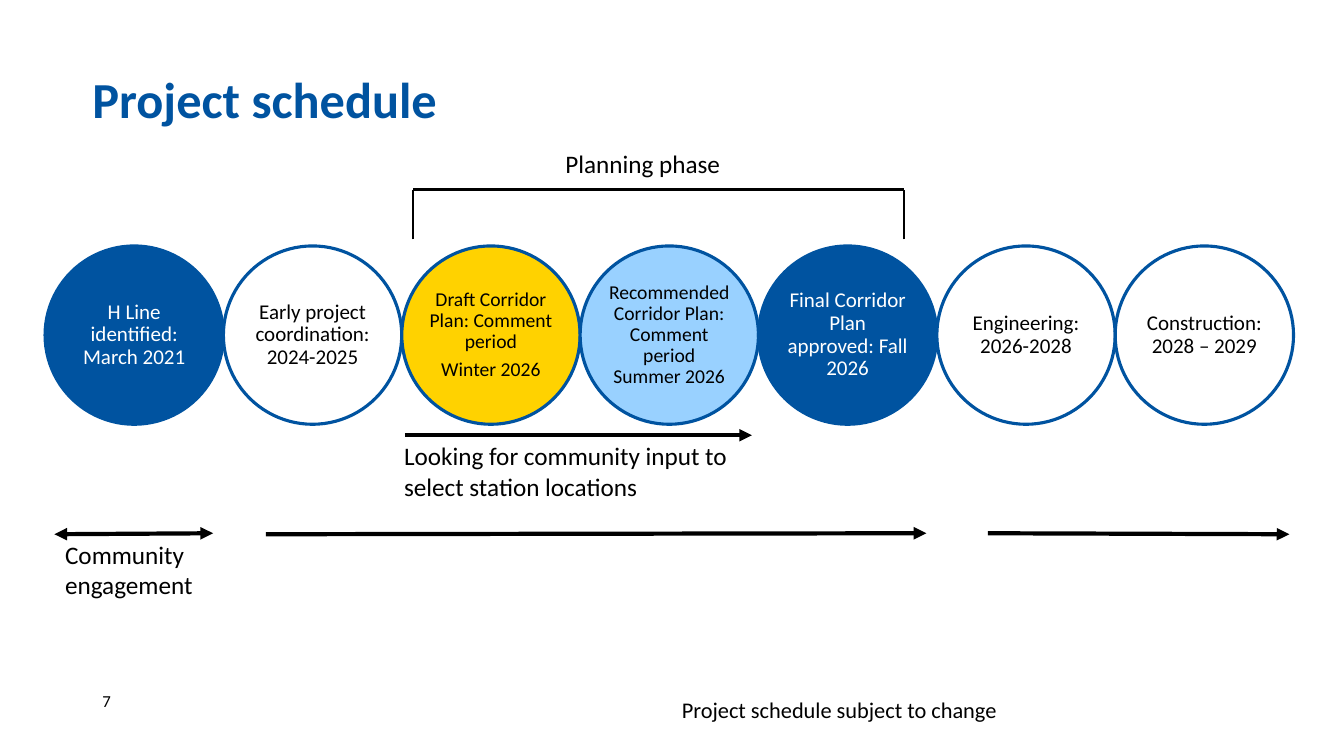
from dataclasses import dataclass

from lxml import etree
from pptx import Presentation
from pptx.dml.color import RGBColor
from pptx.enum.shapes import MSO_CONNECTOR, MSO_SHAPE
from pptx.enum.text import MSO_ANCHOR, PP_ALIGN
from pptx.oxml.ns import qn
from pptx.util import Pt

OVAL = MSO_SHAPE.OVAL
STRAIGHT = MSO_CONNECTOR.STRAIGHT
TOP, MIDDLE, BOTTOM = MSO_ANCHOR.TOP, MSO_ANCHOR.MIDDLE, MSO_ANCHOR.BOTTOM
CENTER = PP_ALIGN.CENTER

FONT = "Calibri"
COLORS = {
    "blue": "0053A0",
    "gold": "FFD200",
    "sky": "99D1FF",
    "white": "FFFFFF",
    "black": "000000",
}

CIRCLE_LEFT, CIRCLE_TOP, CIRCLE_SIZE = 32.2, 175.7, 127.4
BRACKET_LEFT, BRACKET_RIGHT, BRACKET_TOP, BRACKET_BOTTOM = 295, 645.8, 135.4, 171


@dataclass
class Stage:
    """One circle; each paragraph is a tuple of lines."""
    paragraphs: tuple[tuple[str, ...], ...]
    fill: str = "white"
    color: str = "black"
    size: float = 15


@dataclass
class Label:
    text: str
    left: float
    top: float
    width: float
    height: float
    size: float = 18
    color: str = "black"
    bold: bool = False
    anchor: MSO_ANCHOR = TOP
    insets: tuple[float, float, float, float] = (7.2, 3.6, 7.2, 3.6)


@dataclass
class Line:
    x1: float
    y1: float
    x2: float
    y2: float
    width: float = 3
    ends: tuple[str, ...] = ("tailEnd",)


STAGES = [
    Stage((("H Line identified: March 2021",),), "blue", "white"),
    Stage((("Early project coordination: 2024-2025",),)),
    Stage((("Draft Corridor Plan: Comment period",), ("Winter 2026",)), "gold", size=14),
    Stage((("Recommended Corridor Plan: Comment period", "Summer 2026"),), "sky", size=14),
    Stage((("Final Corridor Plan approved: Fall 2026",),), "blue", "white"),
    Stage((("Engineering: 2026-2028",),)),
    Stage((("Construction: 2028 – 2029",),)),
]

LABELS = [
    Label("Project schedule", 66, 0, 828, 96, 36, "blue", True, BOTTOM, (0, 28.8, 0, 3.6)),
    Label("7", 66, 486, 115, 28.8, 12, anchor=MIDDLE, insets=(7.2, 3.6, 0, 3.6)),
    Label("Planning phase", 396.7, 102.5, 248, 29),
    Label("Looking for community input to select station locations", 281.5, 311.2, 248, 51),
    Label("Community engagement", 39.4, 381.8, 115, 51),
    Label("Project schedule subject to change", 480, 494, 275, 26.6, 16),
]

LINES = [
    Line(38.9, 381.6, 152.2, 380.9, ends=("headEnd", "tailEnd")),
    Line(190, 381.6, 661.7, 380.9),
    Line(705.6, 380.9, 921, 381.6),
    Line(289.2, 310.9, 537.1, 310.9),
    Line(BRACKET_LEFT, BRACKET_BOTTOM, BRACKET_LEFT, BRACKET_TOP, 1.5, ()),
    Line(BRACKET_RIGHT, BRACKET_TOP, BRACKET_LEFT, BRACKET_TOP, 1.5, ()),
    Line(BRACKET_RIGHT, BRACKET_BOTTOM, BRACKET_RIGHT, BRACKET_TOP, 1.5, ()),
]


def rgb(name: str) -> RGBColor:
    return RGBColor.from_string(COLORS[name])


def add_run(p, text: str, size: float, color: str, bold: bool = False) -> None:
    r = p.add_run()
    r.text = text
    r.font.name = FONT
    r.font.size = Pt(size)
    r.font.bold = bold
    r.font.color.rgb = rgb(color)


def set_frame(tf, anchor: MSO_ANCHOR, insets: tuple[float, ...]) -> None:
    tf.word_wrap = True
    tf.vertical_anchor = anchor
    tf.margin_left, tf.margin_top, tf.margin_right, tf.margin_bottom = map(Pt, insets)


def draw_stage(slide, stage: Stage, index: int) -> None:
    left = CIRCLE_LEFT + index * CIRCLE_SIZE
    sp = slide.shapes.add_shape(OVAL, Pt(left), Pt(CIRCLE_TOP), Pt(CIRCLE_SIZE), Pt(CIRCLE_SIZE))
    sp.shadow.inherit = False
    sp.fill.solid()
    sp.fill.fore_color.rgb = rgb(stage.fill)
    sp.line.color.rgb = rgb("blue")
    sp.line.width = Pt(2.25)
    tf = sp.text_frame
    set_frame(tf, MIDDLE, (0, 0, 0, 0))
    for i, lines in enumerate(stage.paragraphs):
        p = tf.add_paragraph() if i else tf.paragraphs[0]
        p.alignment = CENTER
        p.line_spacing = 0.9
        p.space_after = Pt(5)
        for j, line in enumerate(lines):
            if j:
                p.add_line_break()
            add_run(p, line, stage.size, stage.color)


def draw_label(slide, label: Label) -> None:
    box = slide.shapes.add_textbox(
        Pt(label.left), Pt(label.top), Pt(label.width), Pt(label.height))
    set_frame(box.text_frame, label.anchor, label.insets)
    p = box.text_frame.paragraphs[0]
    if label.bold:
        p.line_spacing = 0.9
    add_run(p, label.text, label.size, label.color, label.bold)


def draw_line(slide, line: Line) -> None:
    """Draw a black line with a triangle at each of its named ends."""
    cxn = slide.shapes.add_connector(
        STRAIGHT, Pt(line.x1), Pt(line.y1), Pt(line.x2), Pt(line.y2))
    cxn.line.color.rgb = rgb("black")
    cxn.line.width = Pt(line.width)
    sp_pr = cxn._element.spPr
    for end in line.ends:
        etree.SubElement(sp_pr.find(qn("a:ln")), qn(f"a:{end}"), type="triangle")
    etree.SubElement(sp_pr, qn("a:effectLst"))


def main() -> None:
    prs = Presentation()
    prs.slide_width, prs.slide_height = Pt(960), Pt(540)
    s = prs.slides.add_slide(prs.slide_layouts[6])
    for index, stage in enumerate(STAGES):
        draw_stage(s, stage, index)
    for label in LABELS:
        draw_label(s, label)
    for line in LINES:
        draw_line(s, line)
    prs.save("out.pptx")


if __name__ == "__main__":
    main()
